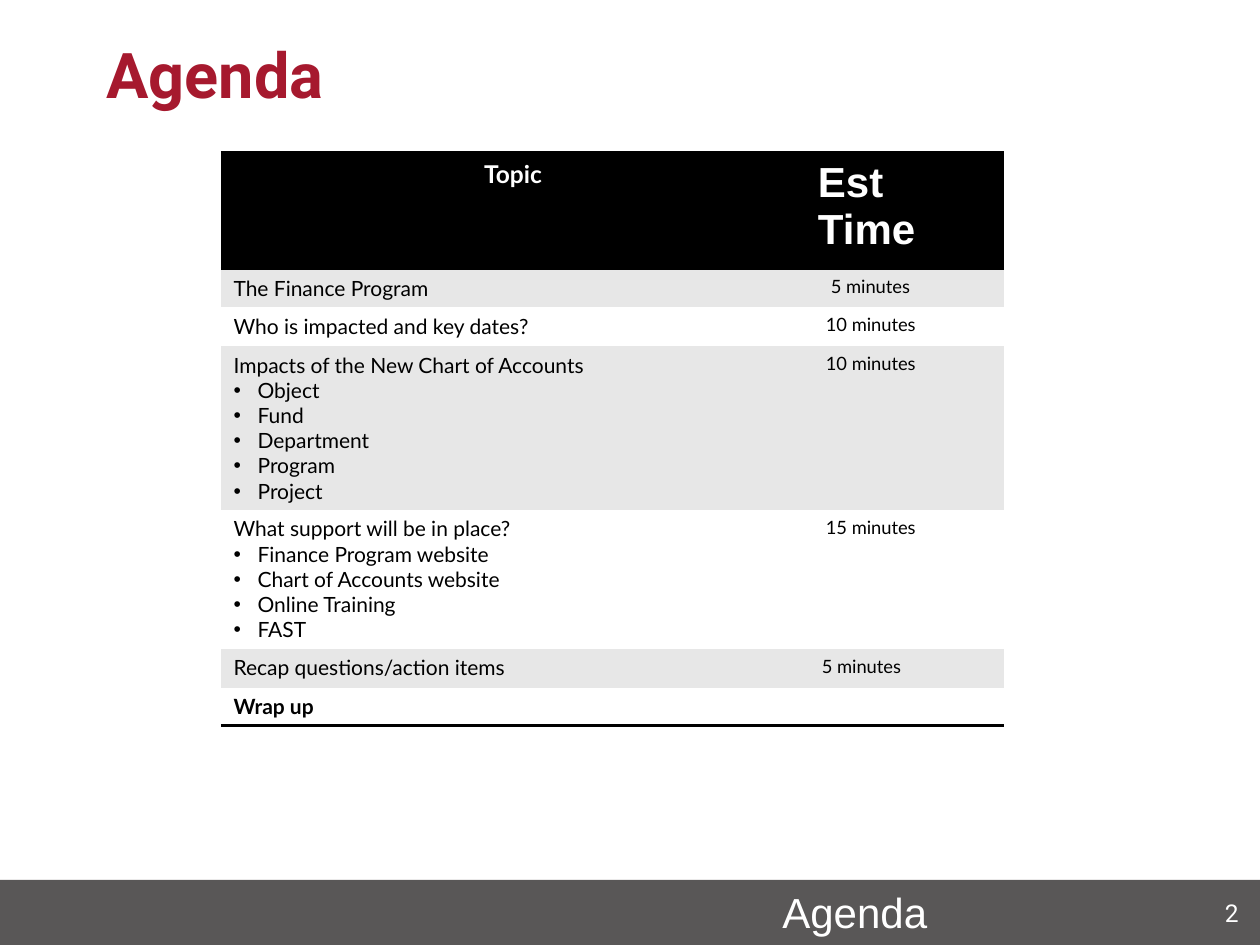
from lxml import etree
from pptx import Presentation
from pptx.dml.color import RGBColor
from pptx.enum.shapes import MSO_SHAPE
from pptx.enum.text import MSO_ANCHOR, PP_ALIGN
from pptx.oxml.ns import qn
from pptx.util import Pt

RECT = MSO_SHAPE.RECTANGLE
MIDDLE = MSO_ANCHOR.MIDDLE
TOP = MSO_ANCHOR.TOP
LEFT, CENTER, RIGHT = PP_ALIGN.LEFT, PP_ALIGN.CENTER, PP_ALIGN.RIGHT
NO_GRID = "{2D5ABB26-0587-4C30-8999-92F81FD0307C}"
PX = 914400 / 126

THEME = {
    "red": "A6192E", "bar": "595757", "white": "FFFFFF",
    "black": "000000", "band": "E7E7E7",
    "title": 36, "label": 24, "head": 14, "page": 14,
    "body": 12, "time": 10.5, "rule": 2,
}


def px(n):
    return round(n * PX)


def style(para, face, size, color, bold=False, align=LEFT):
    para.alignment = align
    font = para.font
    font.name, font.size, font.bold = face, Pt(THEME[size]), bold
    font.color.rgb = RGBColor.from_string(THEME[color])


deck = Presentation()
deck.slide_width, deck.slide_height = px(1260), px(945)
slide = deck.slides.add_slide(deck.slide_layouts[6])

# Footer bar
bar = slide.shapes.add_shape(RECT, 0, px(880), px(1260), px(65))
bar.shadow.inherit = False
bar.fill.solid()
bar.fill.fore_color.rgb = RGBColor.from_string(THEME["bar"])
bar.line.fill.background()

# Title, page number and footer label
labels = [
    ("Agenda", (94, 26, 1071, 95), "Roboto", "title", "red", True, LEFT, MIDDLE, True),
    ("2", (1174, 892, 77, 50), "Roboto", "page", "white", False, RIGHT, TOP, True),
    ("Agenda", (770, 880, 171, 63), "Arial", "label", "white", False, LEFT, TOP, False),
]
for text, place, face, size, color, bold, align, anchor, wrap in labels:
    frame = slide.shapes.add_textbox(*map(px, place)).text_frame
    frame.word_wrap, frame.vertical_anchor = wrap, anchor
    frame.text = text
    style(frame.paragraphs[0], face, size, color, bold, align)

# Agenda table: height, topic lines, time, left margin of the time
rows = [
    (116, ["Topic"], "Est Time", 13),
    (38, ["The Finance Program"], "5 minutes", 26),
    (39, ["Who is impacted and key dates?"], "10 minutes", 21),
    (163, ["Impacts of the New Chart of Accounts", "Object", "Fund",
           "Department", "Program", "Project"], "10 minutes", 21),
    (139, ["What support will be in place?", "Finance Program website",
           "Chart of Accounts website", "Online Training", "FAST"], "15 minutes", 21),
    (39, ["Recap questions/action items"], "5 minutes", 17),
    (38, ["Wrap up"], "", 13),
]
last = len(rows) - 1
total = sum(row[0] for row in rows)
grid = slide.shapes.add_table(len(rows), 2, px(221), px(153), px(783), px(total))
grid.element.find(".//" + qn("a:tableStyleId")).text = NO_GRID
table = grid.table
table.columns[0].width, table.columns[1].width = px(584), px(199)

for i, (height, lines, time, margin) in enumerate(rows):
    table.rows[i].height = px(height)
    topic, slot = table.cell(i, 0), table.cell(i, 1)
    topic.text, slot.text = "\n".join(lines), time
    slot.margin_left = px(margin)
    if not time:
        slot.margin_top = slot.margin_bottom = 0

    for j, para in enumerate(topic.text_frame.paragraphs):
        if j:
            props = para._p.get_or_add_pPr()
            props.set("marL", str(px(24)))
            props.set("indent", str(-px(24)))
            etree.SubElement(props, qn("a:buFont"), typeface="Arial")
            etree.SubElement(props, qn("a:buChar"), char="•")
        if i == 0:
            style(para, "Lato", "head", "white", True, CENTER)
        else:
            style(para, "Lato", "body", "black", i == last)
    para = slot.text_frame.paragraphs[0]
    if i == 0:
        style(para, "Arial", "label", "white", True)
    else:
        style(para, "Lato", "time", "black")

    edges = {0: ["a:lnT", "a:lnB"], last: ["a:lnB"]}.get(i, [])
    fill = "black" if i == 0 else "band" if i % 2 else "white"
    for cell in (topic, slot):
        props = cell._tc.get_or_add_tcPr()
        for edge in edges:
            line = etree.SubElement(props, qn(edge), w=str(Pt(THEME["rule"])))
            paint = etree.SubElement(line, qn("a:solidFill"))
            etree.SubElement(paint, qn("a:srgbClr"), val=THEME["black"])
        cell.fill.solid()
        cell.fill.fore_color.rgb = RGBColor.from_string(THEME[fill])

deck.save("out.pptx")
